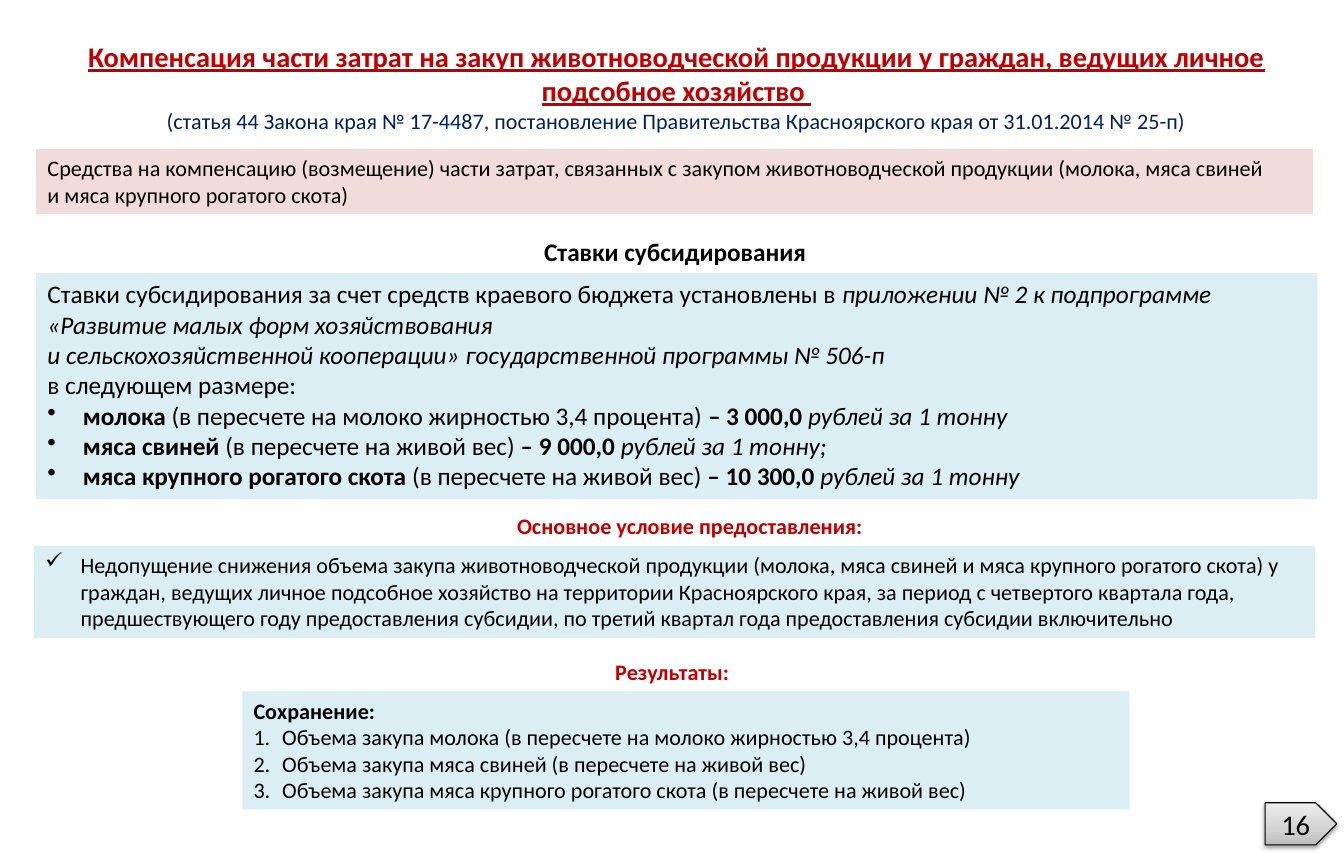
import copy

import pptx
import pptx.dml.color
import pptx.enum.shapes
import pptx.enum.text
import pptx.oxml
import pptx.oxml.ns
import pptx.util

Cm = pptx.util.Cm
Pt = pptx.util.Pt
ALIGN = pptx.enum.text.PP_ALIGN
ANCHOR = pptx.enum.text.MSO_ANCHOR
SHAPE = pptx.enum.shapes.MSO_SHAPE
qn = pptx.oxml.ns.qn

COLORS = {"red": "C00000", "navy": "002060", "black": "000000",
          "pink": "F2DCDB", "blue": "DBEEF4"}
BADGE_STOPS = {0: "BDBDBD", 35: "D1D1D1", 100: "EEEEEE"}
NS = 'xmlns:a="http://schemas.openxmlformats.org/drawingml/2006/main"'
BULLETS = {
    "dot": (0.79, f'<a:buChar {NS} char="•"/>'),
    "check": (0.79, f'<a:buChar {NS} char="✓"/>'),
    "number": (0.64, f'<a:buAutoNum {NS} type="arabicPeriod"/>'),
}
BOLD = {"bold": True}
ITALIC = {"italic": True}
RED_BOLD = {"color": "red", "bold": True}


def rgb(name):
    return pptx.dml.color.RGBColor.from_string(COLORS[name])


def add_run(p, text, size=14, color="black", **formats):
    """Add text to p; each newline becomes a line break of the same format."""
    for i, line in enumerate(text.split("\n")):
        if i:
            p.add_line_break()
            p._p[-1].append(copy.deepcopy(r._r.rPr))
        if not line:
            continue
        r = p.add_run()
        r.text = line
        r.font.color.rgb = rgb(color)
        for name, value in {"name": "Calibri", "size": Pt(size), **formats}.items():
            setattr(r.font, name, value)


def set_bullet(p, kind):
    indent, xml = BULLETS[kind]
    pPr = p._p.get_or_add_pPr()
    pPr.set("marL", str(Cm(indent)))
    pPr.set("indent", str(-Cm(indent)))
    pPr.append(pptx.oxml.parse_xml(xml))


def write(sp, paragraphs, size=14, align=ALIGN.LEFT, anchor=ANCHOR.TOP):
    """Fill sp with (bullet kind, [(text, formats), ...]) paragraphs."""
    tf = sp.text_frame
    for name, value in {"word_wrap": True, "vertical_anchor": anchor}.items():
        setattr(tf, name, value)
    for i, (bullet, runs) in enumerate(paragraphs):
        p = tf.paragraphs[0] if i == 0 else tf.add_paragraph()
        p.alignment = align
        if bullet:
            set_bullet(p, bullet)
        for text, formats in runs:
            add_run(p, text, **{"size": size, **formats})


def add_title(s, box, title, basis):
    sp = s.shapes.add_textbox(*map(Cm, box))
    write(sp, [(None, [(title, {"size": 18, "underline": True, **RED_BOLD})]),
               (None, [(basis, {"color": "navy"})])],
          align=ALIGN.CENTER, anchor=ANCHOR.MIDDLE)


def add_panel(s, box, fill, paragraphs, size=14):
    sp = s.shapes.add_shape(SHAPE.RECTANGLE, *map(Cm, box))
    sp.shadow.inherit = False
    sp.fill.solid()
    sp.fill.fore_color.rgb = rgb(fill)
    sp.line.fill.background()
    write(sp, paragraphs, size)


def add_section(s, box, heading, shift, paragraphs, size=14, formats=RED_BOLD):
    """Draw a blue panel with a heading above it, shifted from its centre."""
    left, top, width, height = box
    head_width, head_height = 13.6, 0.86 if size == 14 else 0.94
    head_left = left + (width - head_width) / 2 + shift
    sp = s.shapes.add_textbox(Cm(head_left), Cm(top - head_height),
                              Cm(head_width), Cm(head_height))
    write(sp, [(None, [(heading, formats)])], size, ALIGN.CENTER)
    add_panel(s, box, "blue", paragraphs, size)


def add_page_badge(s, box, number):
    sp = s.shapes.add_shape(SHAPE.PENTAGON, *map(Cm, box))
    sp.shadow.inherit = False
    sp.line.color.rgb = rgb("black")
    sp.line.width = Pt(0.75)
    stops = "".join(f'<a:gs pos="{pos * 1000}"><a:srgbClr val="{color}"/></a:gs>'
                    for pos, color in BADGE_STOPS.items())
    sp.fill.gradient()
    spPr = sp._element.spPr
    spPr.replace(spPr.find(qn("a:gradFill")), pptx.oxml.parse_xml(
        f'<a:gradFill {NS} rotWithShape="1"><a:gsLst>{stops}</a:gsLst>'
        '<a:lin ang="16200000" scaled="1"/></a:gradFill>'))
    spPr.find(qn("a:effectLst")).append(pptx.oxml.parse_xml(
        f'<a:outerShdw {NS} blurRad="{Pt(3.1)}" dist="{Pt(1.6)}" dir="5400000" '
        f'rotWithShape="0"><a:srgbClr val="{COLORS["black"]}">'
        '<a:alpha val="38000"/></a:srgbClr></a:outerShdw>'))
    write(sp, [(None, [(number, {})])], 18, ALIGN.CENTER, ANCHOR.MIDDLE)


def rate(product, basis, amount, unit):
    return "dot", [(product, BOLD), (basis, {}), (amount, BOLD), (unit, ITALIC)]


def main():
    prs = pptx.Presentation()
    prs.slide_width, prs.slide_height = Cm(30), Cm(19.05)
    s = prs.slides.add_slide(prs.slide_layouts[6])

    add_title(s, (1.6, 0.74, 27, 2.39),
              "Компенсация части затрат на закуп животноводческой продукции "
              "у граждан, ведущих личное подсобное хозяйство ",
              "(статья 44 Закона края № 17-4487, постановление Правительства "
              "Красноярского края от 31.01.2014 № 25-п)")
    add_panel(s, (0.81, 3.33, 28.5, 1.45), "pink", [
        (None, [("Средства на компенсацию (возмещение) части затрат, связанных с закупом "
                 "животноводческой продукции (молока, мяса свиней", {})]),
        (None, [("и мяса крупного рогатого скота)", {})])])

    add_section(s, (0.81, 6.1, 28.6, 5.05), "Ставки субсидирования", -0.04, [
        (None, [("Ставки субсидирования за счет средств краевого бюджета установлены в ", {}),
                ("приложении № 2 к подпрограмме «Развитие малых форм хозяйствования \n"
                 "и сельскохозяйственной кооперации» государственной программы № 506-п \n",
                 ITALIC),
                ("в следующем размере:", {})]),
        rate("молока ", "(в пересчете на молоко жирностью 3,4 процента)",
             " – 3 000,0 ", "рублей за 1 тонну"),
        rate("мяса свиней ", "(в пересчете на живой вес) ",
             "– 9 000,0 ", "рублей за 1 тонну;"),
        rate("мяса крупного рогатого скота ", "(в пересчете на живой вес)",
             " – 10 300,0 ", "рублей за 1 тонну")], 16, BOLD)

    add_section(s, (0.76, 12.19, 28.6, 2.06), "Основное условие предоставления:", 0.34, [
        ("check", [("Недопущение снижения объема закупа животноводческой продукции (молока, "
                    "мяса свиней и мяса крупного рогатого скота) у граждан, ведущих личное "
                    "подсобное хозяйство на территории Красноярского края, за период "
                    "с четвертого квартала года, предшествующего году предоставления "
                    "субсидии, по третий квартал года предоставления субсидии "
                    "включительно", {})])])

    results = ["молока (в пересчете на молоко жирностью 3,4 процента)",
               "мяса свиней (в пересчете на живой вес)",
               "мяса крупного рогатого скота (в пересчете на живой вес)"]
    add_section(s, (5.41, 15.44, 19.8, 2.64), "Результаты: ", -0.25,
                [(None, [("Сохранение:", BOLD)])]
                + [("number", [(f"Объема закупа {item}", {})]) for item in results])
    add_page_badge(s, (28.24, 17.93, 1.6, 0.94), "16")

    prs.save("out.pptx")


if __name__ == "__main__":
    main()
